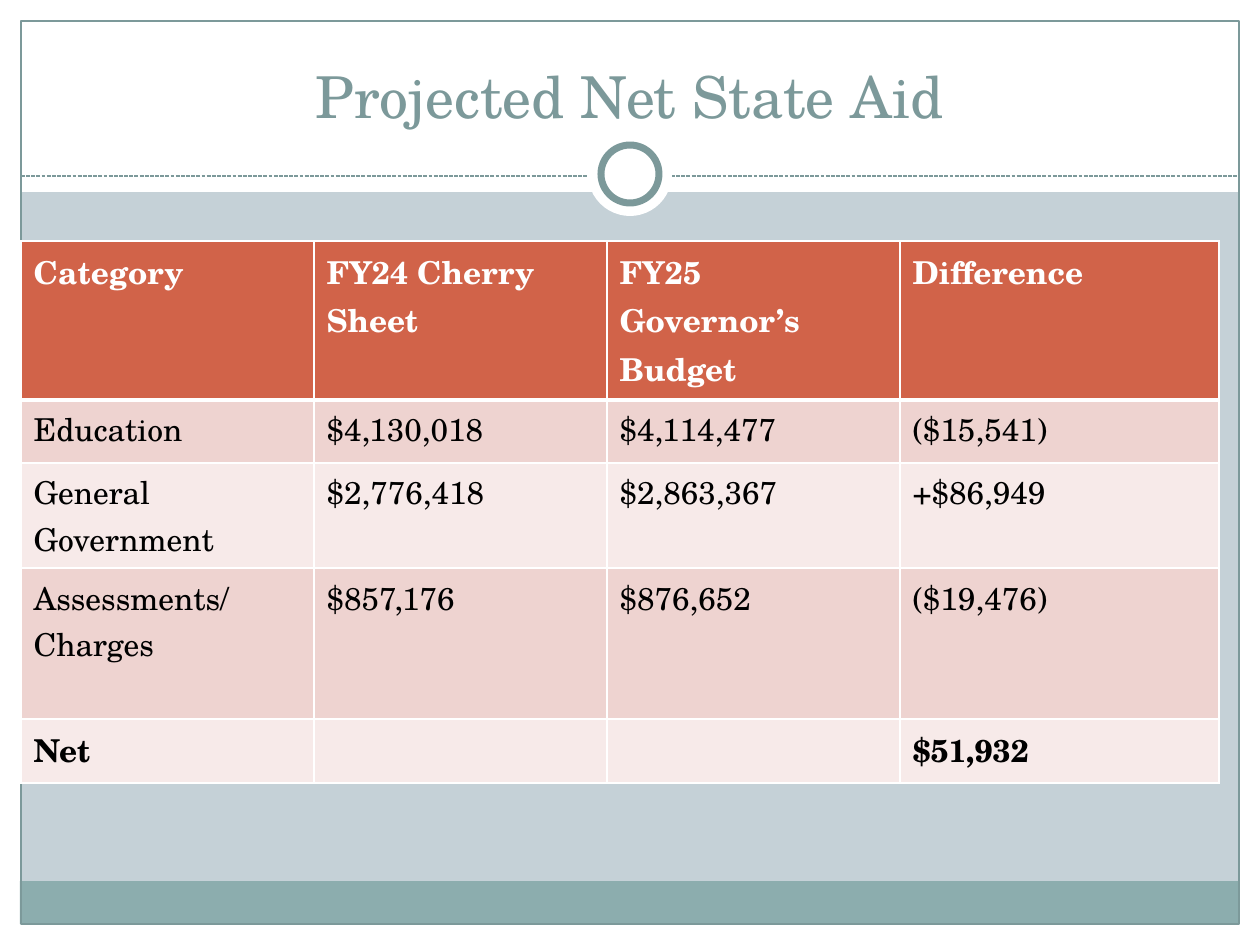
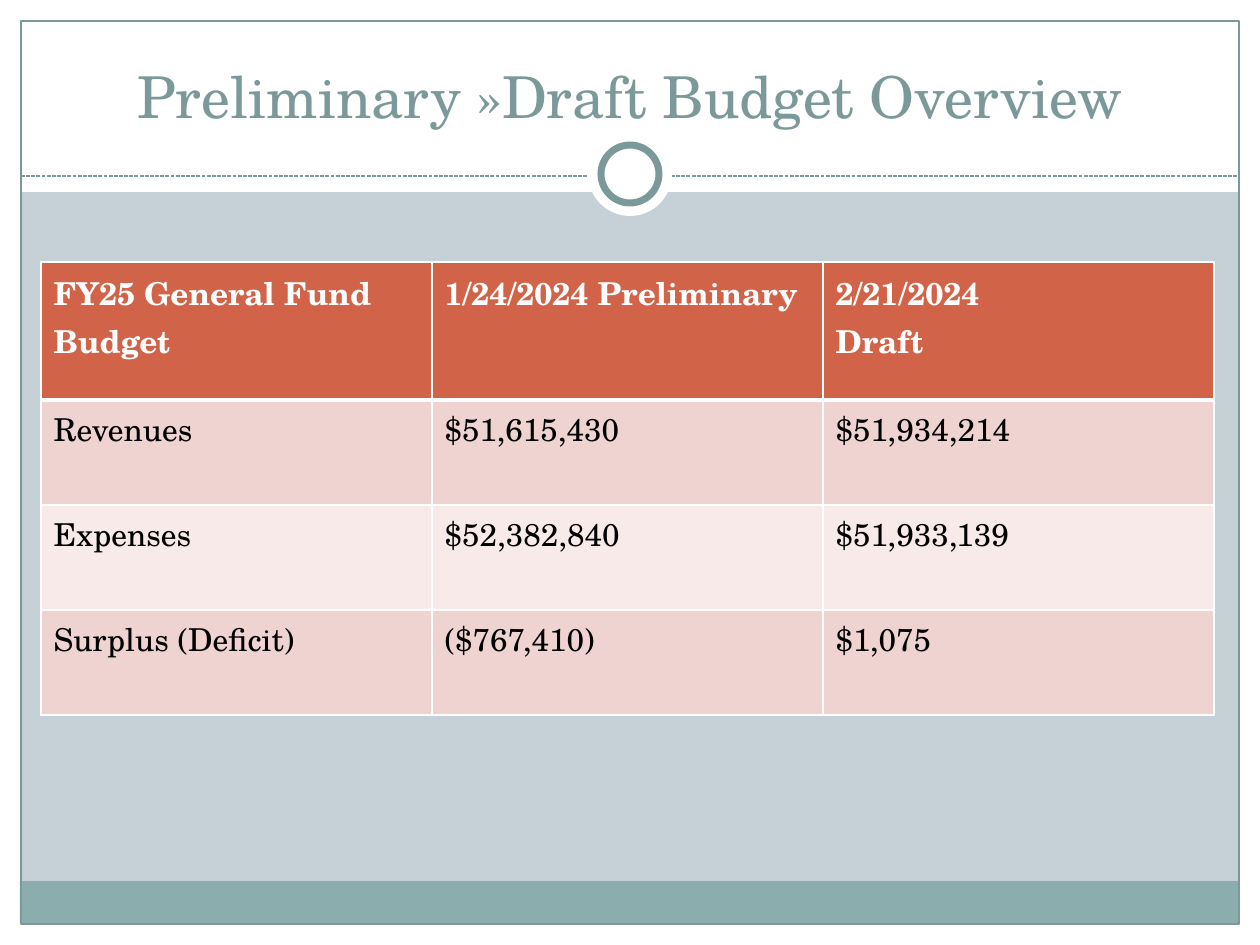
from lxml import etree
from pptx import Presentation
from pptx.dml.color import RGBColor
from pptx.enum.dml import MSO_LINE
from pptx.enum.shapes import MSO_CONNECTOR, MSO_SHAPE
from pptx.enum.text import MSO_ANCHOR, MSO_AUTO_SIZE, PP_ALIGN
from pptx.oxml.ns import qn
from pptx.util import Emu, Pt

RECT, OVAL = MSO_SHAPE.RECTANGLE, MSO_SHAPE.OVAL
STRAIGHT, DASH = MSO_CONNECTOR.STRAIGHT, MSO_LINE.SQUARE_DOT
BOTTOM, CENTER, FIXED = MSO_ANCHOR.BOTTOM, PP_ALIGN.CENTER, MSO_AUTO_SIZE.NONE

SCALE = 914400 / 126
WIDE, HIGH, EDGE = 1260, 945, 21
FONT = "TeX Gyre Schola"
TITLE_BOX = (42, 32, 1176, 104)
COLORS = {
    "back": "C5D1D7", "white": "FFFFFF", "foot": "8CADAE", "teal": "7C999A",
    "head": "D16349", "odd": "EED3D0", "even": "F7EAE9", "black": "000000",
}

AID = {
    "title": "Projected Net State Aid",
    "spot": (21, 241),
    "cols": (293, 293, 293, 319),
    "rows": (159, 63, 105, 151, 64),
    "data": (
        ("Category", "FY24 Cherry Sheet", "FY25 Governor’s Budget", "Difference"),
        ("Education", "$4,130,018", "$4,114,477", "($15,541)"),
        ("General Government", "$2,776,418", "$2,863,367", "+$86,949"),
        ("Assessments/\nCharges", "$857,176", "$876,652", "($19,476)"),
        ("Net", "", "", "$51,932"),
    ),
    "bold": (0, 4),
}
BUDGET = {
    "title": "Preliminary »Draft Budget Overview",
    "spot": (41, 262),
    "cols": (391,) * 3,
    "rows": (138, 105, 105, 105),
    "data": (
        ("FY25 General Fund Budget", "1/24/2024 Preliminary", "2/21/2024\nDraft"),
        ("Revenues", "$51,615,430", "$51,934,214"),
        ("Expenses", "$52,382,840", "$51,933,139"),
        ("Surplus (Deficit)", "($767,410)", "$1,075"),
    ),
    "bold": (0,),
}


def px(num):
    return Emu(round(num * SCALE))


def rgb(name):
    return RGBColor.from_string(COLORS[name])


def apply(item, **form):
    for key, value in form.items():
        setattr(item, key, value)


def paint(fill, name):
    fill.solid()
    fill.fore_color.rgb = rgb(name)


def style(para, size, color, bold=False):
    apply(para.font, name=FONT, size=Pt(size), bold=bold)
    para.font.color.rgb = rgb(color)


def add_form(slide, kind, box, fill=None, line=None, width=0.75):
    form = slide.shapes.add_shape(kind, *map(px, box))
    form.shadow.inherit = False
    if fill:
        paint(form.fill, fill)
    else:
        form.fill.background()
    if line:
        paint(form.line.fill, line)
        form.line.width = Pt(width)
    else:
        form.line.fill.background()
    return form


def add_rule(slide, left, right, top):
    rule = slide.shapes.add_connector(STRAIGHT, *map(px, (left, top, right, top)))
    paint(rule.line.fill, "teal")
    apply(rule.line, width=Pt(0.75), dash_style=DASH)
    etree.SubElement(rule._element.spPr, qn("a:effectLst"))
    return rule


def add_disc(slide, mid, top, size, **form):
    return add_form(slide, OVAL, (mid - size // 2, top, size, size), **form)


def build_frame(deck, layout):
    paint(layout.background.fill, "back")
    draft = deck.slides.add_slide(layout)
    inner = WIDE - 2 * EDGE
    bands = (
        (0, HIGH - EDGE, WIDE, EDGE),
        (0, 0, WIDE, 192),
        (0, 0, EDGE, HIGH),
        (WIDE - EDGE, 0, EDGE, HIGH),
    )
    parts = [add_form(draft, RECT, box, fill="white") for box in bands]
    parts += [
        add_form(draft, RECT, (20, 881, inner, 43), fill="foot"),
        add_form(draft, RECT, (EDGE, EDGE, inner, HIGH - 2 * EDGE), line="teal"),
        add_rule(draft, EDGE, WIDE - EDGE, 176),
        add_disc(draft, WIDE // 2, 132, 84, fill="white"),
        add_disc(draft, WIDE // 2, 145, 58, fill="white", line="teal", width=4),
    ]
    for num, part in enumerate(parts, 20):
        part._element.xpath(".//p:cNvPr")[0].set("id", str(num))
        layout.shapes._spTree.append(part._element)
    return draft


def set_title(slide, box, text):
    title = slide.shapes.title
    left, top, width, height = map(px, box)
    apply(title, left=left, top=top, width=width, height=height)
    frame = title.text_frame
    apply(frame, text=text, word_wrap=True, auto_size=FIXED, vertical_anchor=BOTTOM)
    para = frame.paragraphs[0]
    para.alignment = CENTER
    style(para, 33, "teal")


def set_edges(cell, low):
    props = cell._tc.get_or_add_tcPr()
    for spot, (side, width) in enumerate(dict(L=1, R=1, T=1, B=low).items()):
        line = etree.Element(qn(f"a:ln{side}"), w=str(Pt(width)))
        fill = etree.SubElement(line, qn("a:solidFill"))
        etree.SubElement(fill, qn("a:srgbClr"), val=COLORS["white"])
        props.insert(spot, line)


def fill_cell(cell, text, row, bold):
    head = row == 0
    cell.text = text
    paint(cell.fill, "head" if head else "odd" if row % 2 else "even")
    for para in cell.text_frame.paragraphs:
        style(para, 18, "white" if head else "black", bold)
    set_edges(cell, 3 if head else 1)


def add_grid(slide, spot, cols, rows, data, bold):
    box = (*spot, sum(cols), sum(rows))
    grid = slide.shapes.add_table(len(rows), len(cols), *map(px, box)).table
    for col, width in zip(grid.columns, cols):
        col.width = px(width)
    for row, height in zip(grid.rows, rows):
        row.height = px(height)
    for row, texts in enumerate(data):
        for col, text in enumerate(texts):
            fill_cell(grid.cell(row, col), text, row, row in bold)


def fill_slide(slide, title, **grid):
    set_title(slide, TITLE_BOX, title)
    add_grid(slide, **grid)


def main():
    deck = Presentation()
    apply(deck, slide_width=px(WIDE), slide_height=px(HIGH))
    layout = deck.slide_layouts[5]
    fill_slide(build_frame(deck, layout), **AID)
    fill_slide(deck.slides.add_slide(layout), **BUDGET)
    deck.save("out.pptx")


if __name__ == "__main__":
    main()
